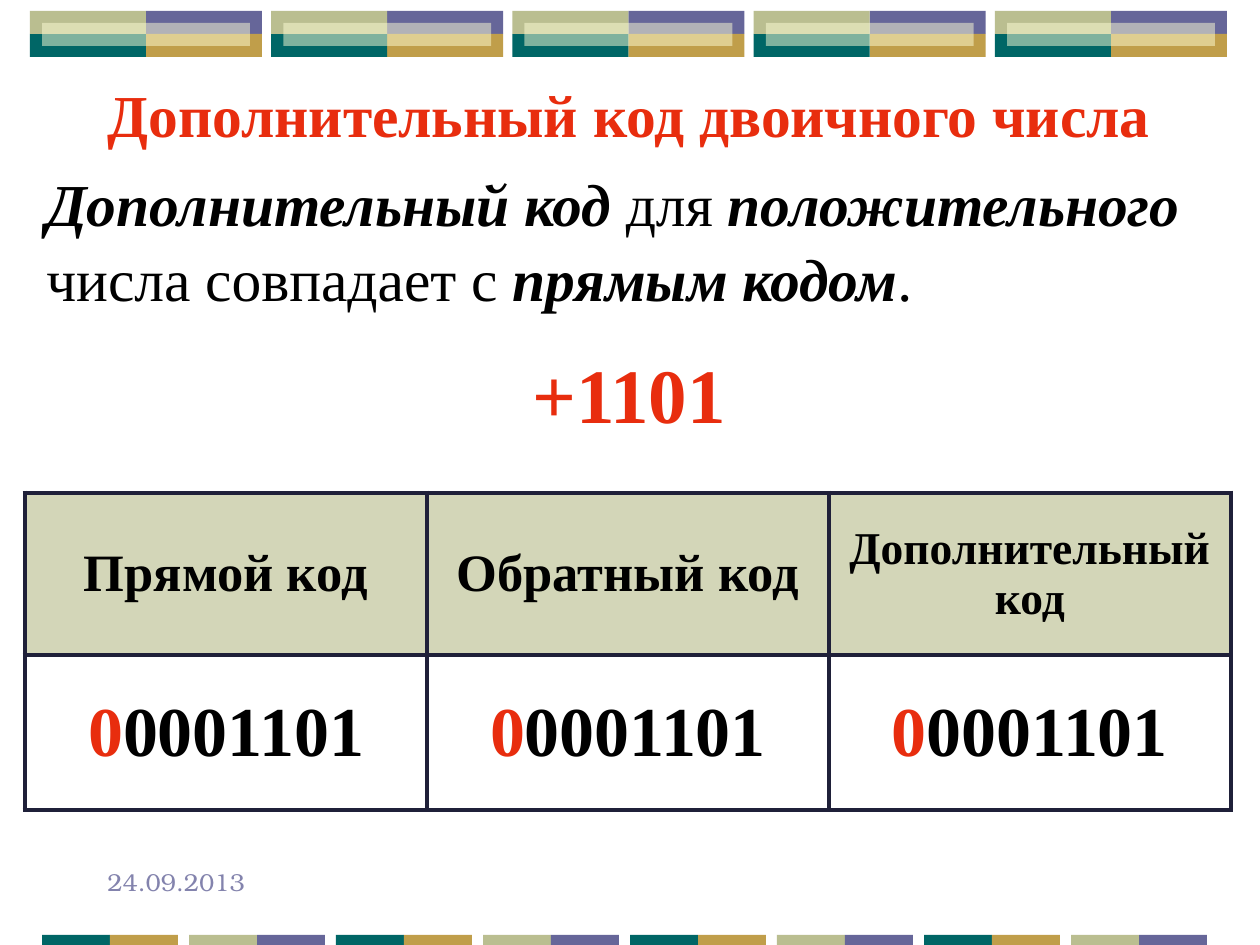
"""Slide on the two's complement code of a positive binary number."""
import pptx
import pptx.util
import pptx.dml.color
import pptx.enum.shapes
import pptx.enum.text
import pptx.oxml
import pptx.oxml.ns
from lxml import etree

PX = 914400 / 126
HUES = {
    "red": "E82D0E", "black": "000000", "head": "D3D6B8", "edge": "1F2039",
    "teal": "006666", "gold": "C09E4A", "plum": "666699", "sage": "BABE90",
    "pale": "FEFED6", "date": "8383AD",
}
SERIF = "Times New Roman"
ALIGN = pptx.enum.text.PP_ALIGN
ANCHOR = pptx.enum.text.MSO_ANCHOR


def emu(*sizes):
    """Turn px lengths into EMU."""
    return [round(size * PX) for size in sizes]


def hue(name):
    """Return the named colour."""
    return pptx.dml.color.RGBColor.from_string(HUES[name])


def style(run, size, tint, bold=False, italic=False, face=SERIF):
    """Format one run."""
    font = run.font
    font.size = pptx.util.Pt(size)
    font.name = face
    font.bold = bold
    font.italic = italic
    font.color.rgb = hue(tint)


def write(frame, parts, align=ALIGN.LEFT, space=1.0):
    """Fill a frame with one paragraph of (text, format) parts."""
    frame.word_wrap = True
    frame.auto_size = pptx.enum.text.MSO_AUTO_SIZE.NONE
    para = frame.paragraphs[0]
    para.alignment = align
    para.line_spacing = space
    for text, form in parts:
        run = para.add_run()
        run.text = text
        style(run, **form)


def label(slide, box, parts, space=1.05):
    """Place a text box."""
    frame = slide.shapes.add_textbox(*emu(*box)).text_frame
    write(frame, parts, space=space)


def block(slide, box, tint, alpha=None):
    """Draw a plain filled rectangle."""
    kind = pptx.enum.shapes.MSO_SHAPE.RECTANGLE
    shape = slide.shapes.add_shape(kind, *emu(*box))
    shape.shadow.inherit = False
    shape.line.fill.background()
    shape.fill.solid()
    shape.fill.fore_color.rgb = hue(tint)
    if alpha:
        tone = shape.fill._xPr.find(".//" + pptx.oxml.ns.qn("a:srgbClr"))
        etree.SubElement(tone, pptx.oxml.ns.qn("a:alpha"), val=str(alpha * 1000))


def banner(slide, box, count=5, half=116, tall=23):
    """Draw the row of four-colour tiles along the top."""
    left, top, width, _ = box
    step = (width - 2 * half) / (count - 1)
    tiles = [("plum", 1, 0), ("gold", 1, 1), ("teal", 0, 1), ("sage", 0, 0)]
    for i in range(count):
        x = left + i * step
        for tint, col, row in tiles:
            block(slide, (x + col * half, top + row * tall, half, tall), tint)
        block(slide, (x + 12, top + 12, 208, tall), "pale", 50)


def footer(slide, box, count=8, half=68):
    """Draw the row of two-colour strips along the bottom."""
    left, top, width, tall = box
    step = (width - 2 * half) / (count - 1)
    pairs = [("teal", "gold"), ("sage", "plum")]
    for i in range(count):
        for col, tint in enumerate(pairs[i % 2]):
            block(slide, (left + i * step + col * half, top, half, tall), tint)


def title(slide, box, text):
    """Set the slide title."""
    shape = slide.shapes.title
    shape.left, shape.top, shape.width, shape.height = emu(*box)
    shape.text_frame.vertical_anchor = ANCHOR.TOP
    form = dict(size=34, tint="red", bold=True)
    write(shape.text_frame, [(text, form)], ALIGN.CENTER, 1.05)


def border(cell):
    """Give a cell its four edges."""
    props = cell._tc.get_or_add_tcPr()
    for i, side in enumerate(("lnL", "lnR", "lnT", "lnB")):
        props.insert(i, pptx.oxml.parse_xml(
            f'<a:{side} {pptx.oxml.ns.nsdecls("a")} w="38100"><a:solidFill>'
            f'<a:srgbClr val="{HUES["edge"]}"/></a:solidFill></a:{side}>'))


def codes(slide, box, heads, bits):
    """Build the table of codes."""
    left, top, width, tall = box
    shape = slide.shapes.add_table(2, len(heads), *emu(left, top, width, tall))
    table = shape.table
    table.horz_banding = False
    for col in table.columns:
        col.width = emu(width / len(heads))[0]
    for row, high in zip(table.rows, (162, tall - 162)):
        row.height = emu(high)[0]
    sign = dict(size=40, tint="red", bold=True)
    rest = dict(sign, tint="black")
    for i, (text, size) in enumerate(heads):
        head, value = table.cell(0, i), table.cell(1, i)
        head.fill.solid()
        head.fill.fore_color.rgb = hue("head")
        value.fill.background()
        write(head.text_frame, [(text, dict(rest, size=size))], ALIGN.CENTER)
        write(value.text_frame, [(bits[0], sign), (bits[1:], rest)], ALIGN.CENTER)
        for cell in (head, value):
            cell.vertical_anchor = ANCHOR.MIDDLE
            border(cell)


def main():
    """Build and save the slide."""
    deck = pptx.Presentation()
    deck.slide_width, deck.slide_height = emu(1260, 945)
    slide = deck.slides.add_slide(deck.slide_layouts[5])
    banner(slide, (30, 11, 1197, 46))
    footer(slide, (42, 935, 1165, 10))
    plain = dict(size=34, tint="black")
    strong = dict(plain, bold=True, italic=True)
    label(slide, (34, 157, 1226, 155), [
        ("Дополнительный код", strong), (" для ", plain),
        ("положительного", strong), (" числа совпадает с ", plain),
        ("прямым кодом", strong), (".", plain)])
    title(slide, (54, 68, 1150, 84), "Дополнительный код двоичного числа")
    heads = [("Прямой код", 30), ("Обратный код", 30), ("Дополнительный код", 26)]
    codes(slide, (25, 493, 1206, 317), heads, "00001101")
    label(slide, (520, 336, 228, 105),
          [("+1101", dict(size=44, tint="red", bold=True))])
    label(slide, (95, 861, 262, 63),
          [("24.09.2013", dict(size=14, tint="date", face="TeX Gyre Bonum"))], 1.0)
    deck.save("out.pptx")


if __name__ == "__main__":
    main()
